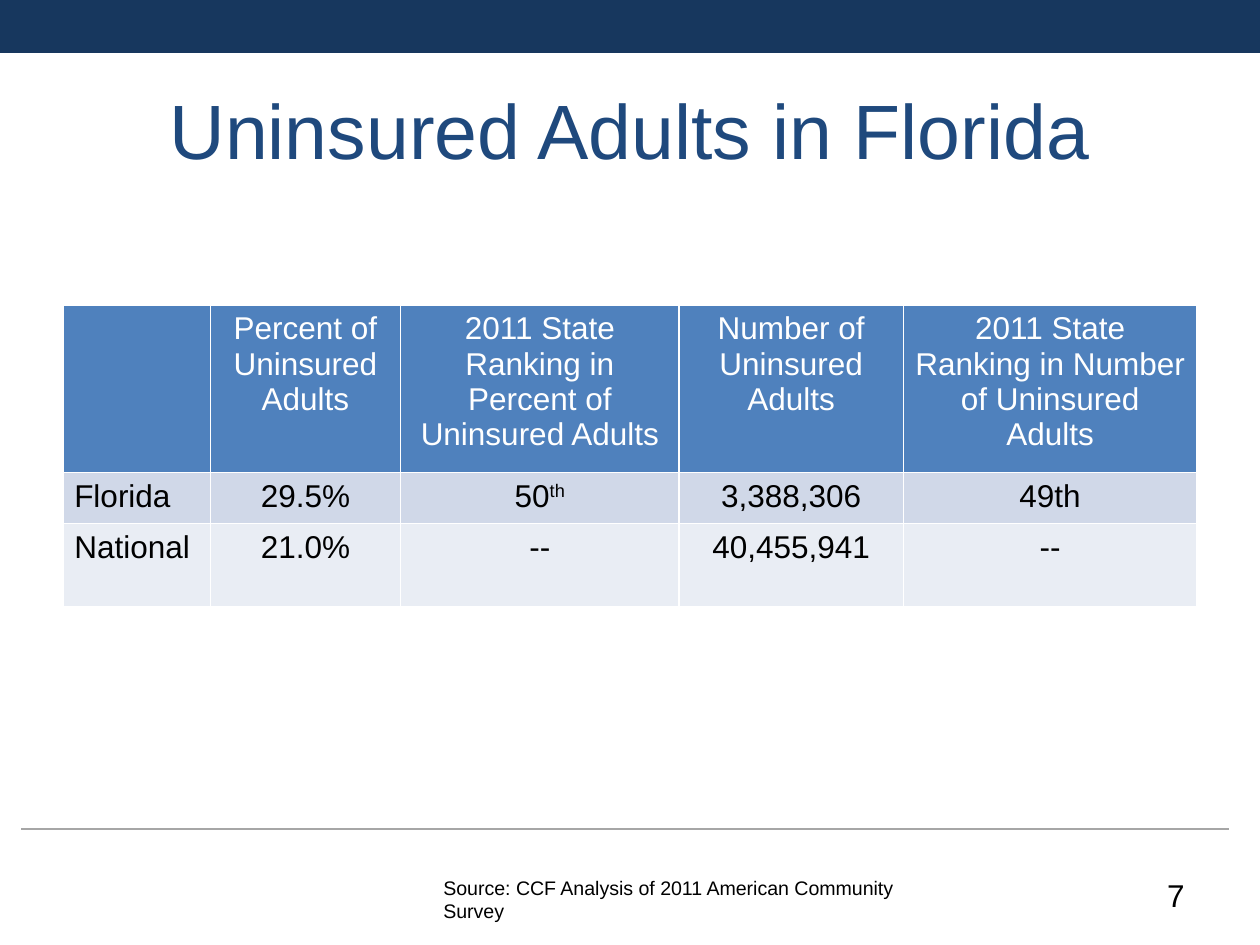
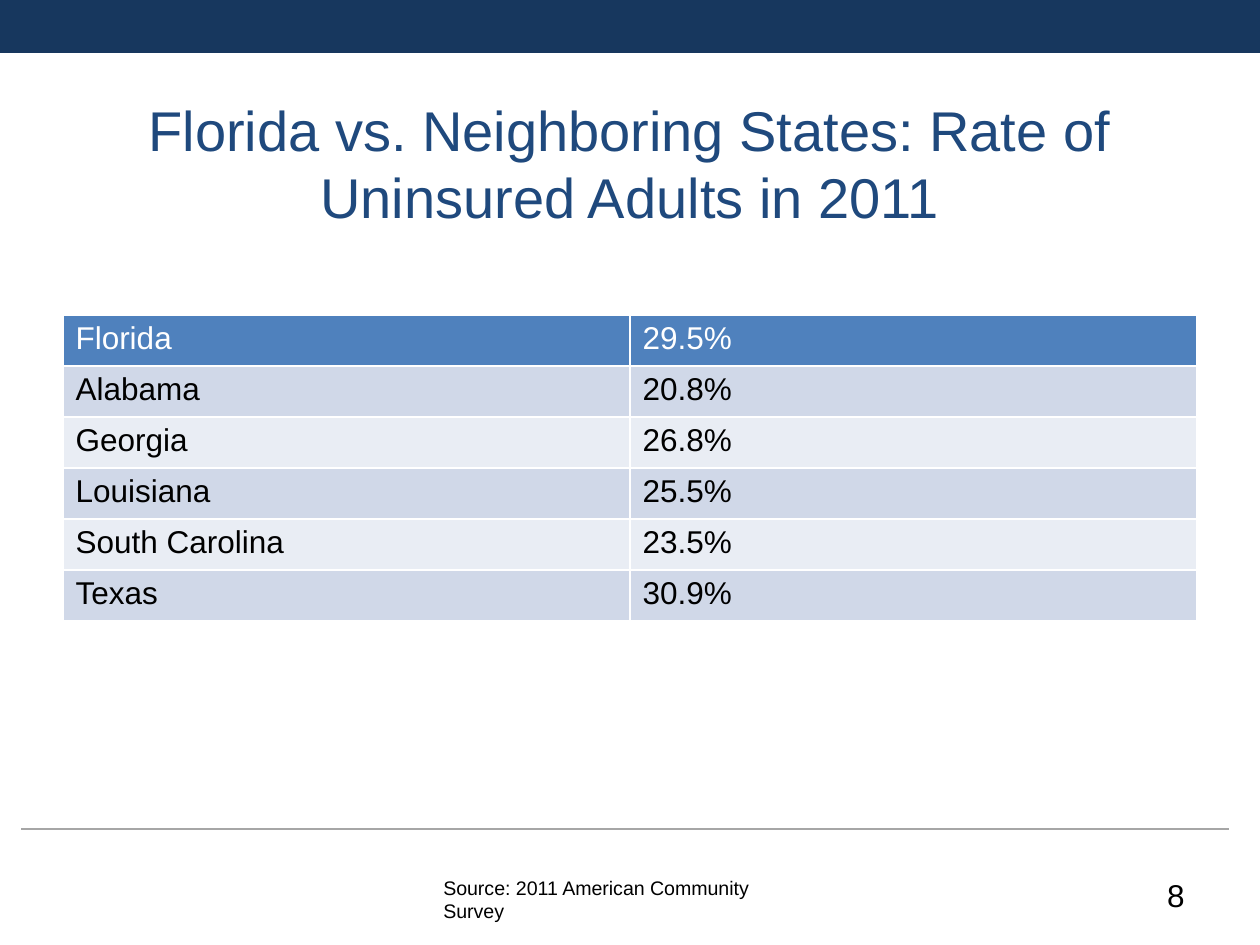
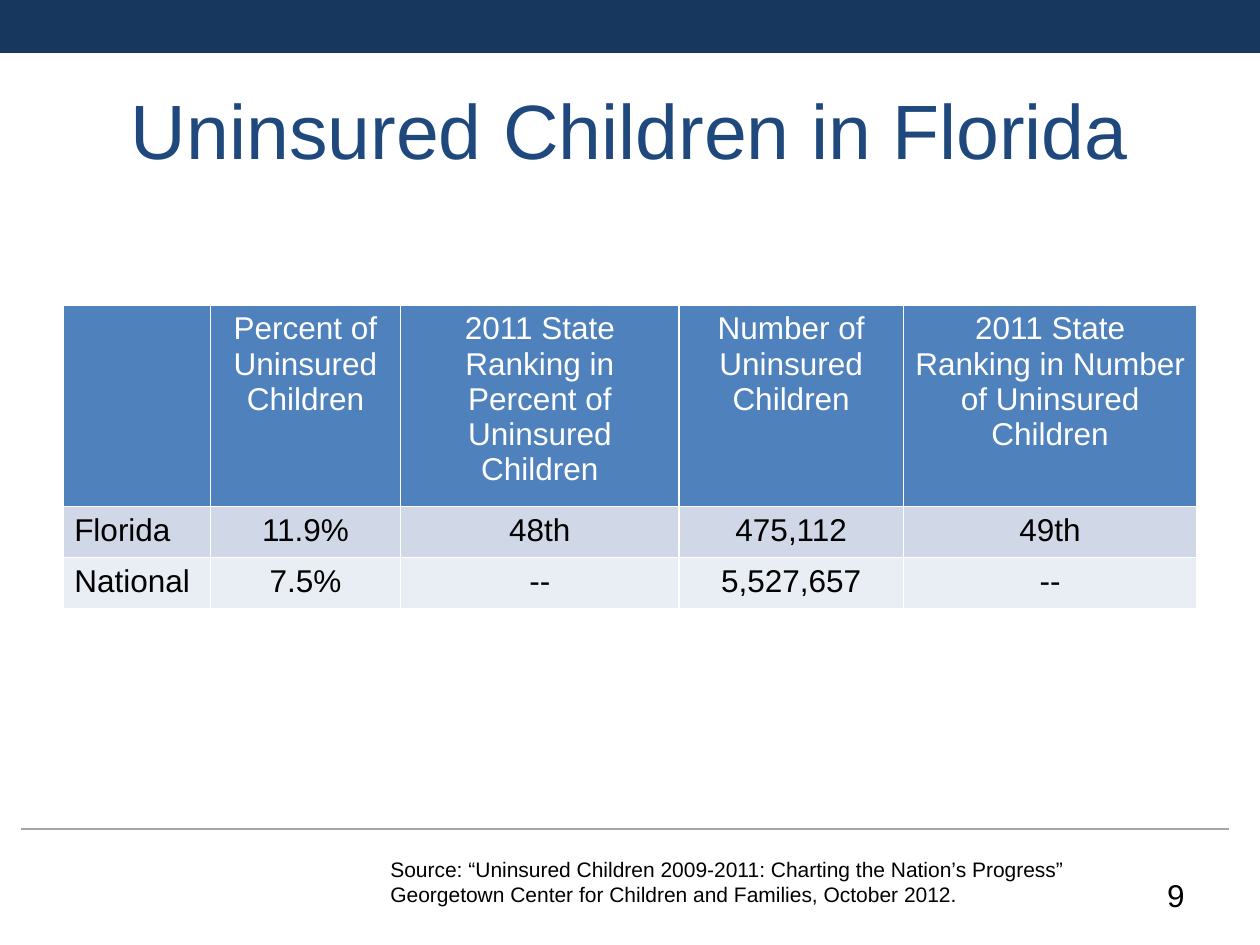
"""Builds three slides on uninsured adults and children in Florida."""
from dataclasses import dataclass

from lxml.etree import SubElement
from pptx import Presentation
from pptx.dml.color import RGBColor as RGB
from pptx.enum.shapes import MSO_CONNECTOR as CONN, MSO_SHAPE as SHAPE
from pptx.enum.text import MSO_ANCHOR as ANCHOR, PP_ALIGN as ALIGN
from pptx.oxml.ns import qn
from pptx.util import Emu, Pt

SCALE = 4572


def px(n):
    return Emu(n * SCALE)


@dataclass(frozen=True)
class Theme:
    font: str = "Arial"
    band: str = "17375E"
    rule: str = "A6A6A6"
    title: str = "1F497D"
    text: str = "000000"
    white: str = "FFFFFF"
    header: str = "4F81BD"
    stripes: tuple = ("D0D8E8", "E9EDF4")
    title_size: float = 44
    long_title_size: float = 32
    body_size: float = 18
    source_size: float = 11.2
    citation_size: float = 12


class Deck:
    def __init__(self, theme):
        self.theme = theme
        self.prs = Presentation()
        self.prs.slide_width, self.prs.slide_height = px(2000), px(1500)
        self.slide = None

    def add_slide(self, number):
        self.slide = self.prs.slides.add_slide(self.prs.slide_layouts[6])
        self.band(0, 0, 2000, 84)
        self.rule(34, 1950, 1316)
        self.text(str(number), (1434, 1380, 466, 80), self.theme.body_size,
                  align=ALIGN.RIGHT)

    def band(self, x, y, w, h):
        sp = self.slide.shapes.add_shape(SHAPE.RECTANGLE, px(x), px(y), px(w), px(h))
        sp.shadow.inherit = False
        sp.fill.solid()
        sp.fill.fore_color.rgb = RGB.from_string(self.theme.band)
        sp.line.fill.background()

    def rule(self, x1, x2, y):
        ln = self.slide.shapes.add_connector(CONN.STRAIGHT, px(x1), px(y), px(x2), px(y))
        ln.line.color.rgb = RGB.from_string(self.theme.rule)
        ln.line.width = Pt(0.75)
        SubElement(ln._element.spPr, qn("a:effectLst"))

    def style(self, p, size, color, align):
        p.alignment = align
        p.font.name = self.theme.font
        p.font.size = Pt(size)
        p.font.color.rgb = RGB.from_string(color)

    def text(self, text, box, size, color=None, align=ALIGN.LEFT, anchor=ANCHOR.TOP):
        tf = self.slide.shapes.add_textbox(*map(px, box)).text_frame
        tf.word_wrap = True
        tf.vertical_anchor = anchor
        tf.text = text
        self.style(tf.paragraphs[0], size, color or self.theme.text, align)

    def title(self, text, height=210, size=None):
        self.text(text, (100, 100, 1800, height), size or self.theme.title_size,
                  self.theme.title, ALIGN.CENTER, ANCHOR.MIDDLE)

    def cell_borders(self, cell):
        tcPr = cell._tc.get_or_add_tcPr()
        for side in ("lnL", "lnR", "lnT", "lnB"):
            ln = SubElement(tcPr, qn(f"a:{side}"), w=str(Pt(1)))
            fill = SubElement(ln, qn("a:solidFill"))
            SubElement(fill, qn("a:srgbClr"), val=self.theme.white)

    def fill_cell(self, cell, text, fill, color, align, margin):
        self.cell_borders(cell)
        cell.fill.solid()
        cell.fill.fore_color.rgb = RGB.from_string(fill)
        cell.margin_left = cell.margin_right = px(margin)
        for i, line in enumerate(text.split("\n")):
            tf = cell.text_frame
            p = tf.add_paragraph() if i else tf.paragraphs[0]
            base, _, raised = line.partition("^")
            if base:
                p.add_run().text = base
            if raised:
                r = p.add_run()
                r.text = raised
                r._r.get_or_add_rPr().set("baseline", "30000")
            self.style(p, self.theme.body_size, color, align)

    def table(self, rows, y, widths, heights, margin=20, align=ALIGN.LEFT):
        t = self.theme
        tbl = self.slide.shapes.add_table(
            len(rows), len(widths), px(100), px(y), px(sum(widths)), px(sum(heights))).table
        tbl.first_row = tbl.horz_banding = False
        for col, w in zip(tbl.columns, widths):
            col.width = px(w)
        for i, (values, h) in enumerate(zip(rows, heights)):
            tbl.rows[i].height = px(h)
            fill = t.stripes[(i - 1) % 2] if i else t.header
            color = t.text if i else t.white
            for j, value in enumerate(values):
                self.fill_cell(tbl.cell(i, j), value, fill, color,
                               align if j else ALIGN.LEFT, margin)

    def ranking_table(self, group, last_header, florida, national, heights):
        header = ("", f"Percent of Uninsured {group}",
                  f"2011 State Ranking in Percent of Uninsured {group}",
                  f"Number of Uninsured {group}", last_header)
        self.table((header, ("Florida", *florida), ("National", *national)), 484,
                   (234, 302, 442, 356, 466), heights, 18, ALIGN.CENTER)


def main():
    theme = Theme()
    deck = Deck(theme)

    deck.add_slide(7)
    deck.title("Uninsured Adults in Florida")
    deck.ranking_table("Adults", "2011 State Ranking in Number of Uninsured\nAdults",
                       ("29.5%", "50^th", "3,388,306", "49th"),
                       ("21.0%", "--", "40,455,941", "--"), (266, 81, 132))
    deck.text("Source: CCF Analysis of 2011 American Community Survey",
              (684, 1380, 816, 80), theme.source_size)

    deck.add_slide(8)
    deck.title("Florida vs. Neighboring States: Rate of Uninsured Adults in 2011",
               316, theme.long_title_size)
    rates = (("Florida", "29.5%"), ("Alabama", "20.8%"), ("Georgia", "26.8%"),
             ("Louisiana", "25.5%"), ("South Carolina", "23.5%"), ("Texas", "30.9%"))
    deck.table(rates, 500, (900, 900), (81,) * len(rates))
    deck.text("Source: 2011 American Community Survey",
              (684, 1380, 628, 80), theme.source_size)

    deck.add_slide(9)
    deck.title("Uninsured Children in Florida")
    deck.ranking_table("Children", "2011 State Ranking in Number of Uninsured Children",
                       ("11.9%", "48th", "475,112", "49th"),
                       ("7.5%", "--", "5,527,657", "--"), (298, 81, 81))
    deck.text("Source: “Uninsured Children 2009-2011: Charting the Nation’s Progress” "
              "Georgetown Center for Children and Families, October 2012.",
              (600, 1350, 1134, 108), theme.citation_size)

    deck.prs.save("out.pptx")


if __name__ == "__main__":
    main()
